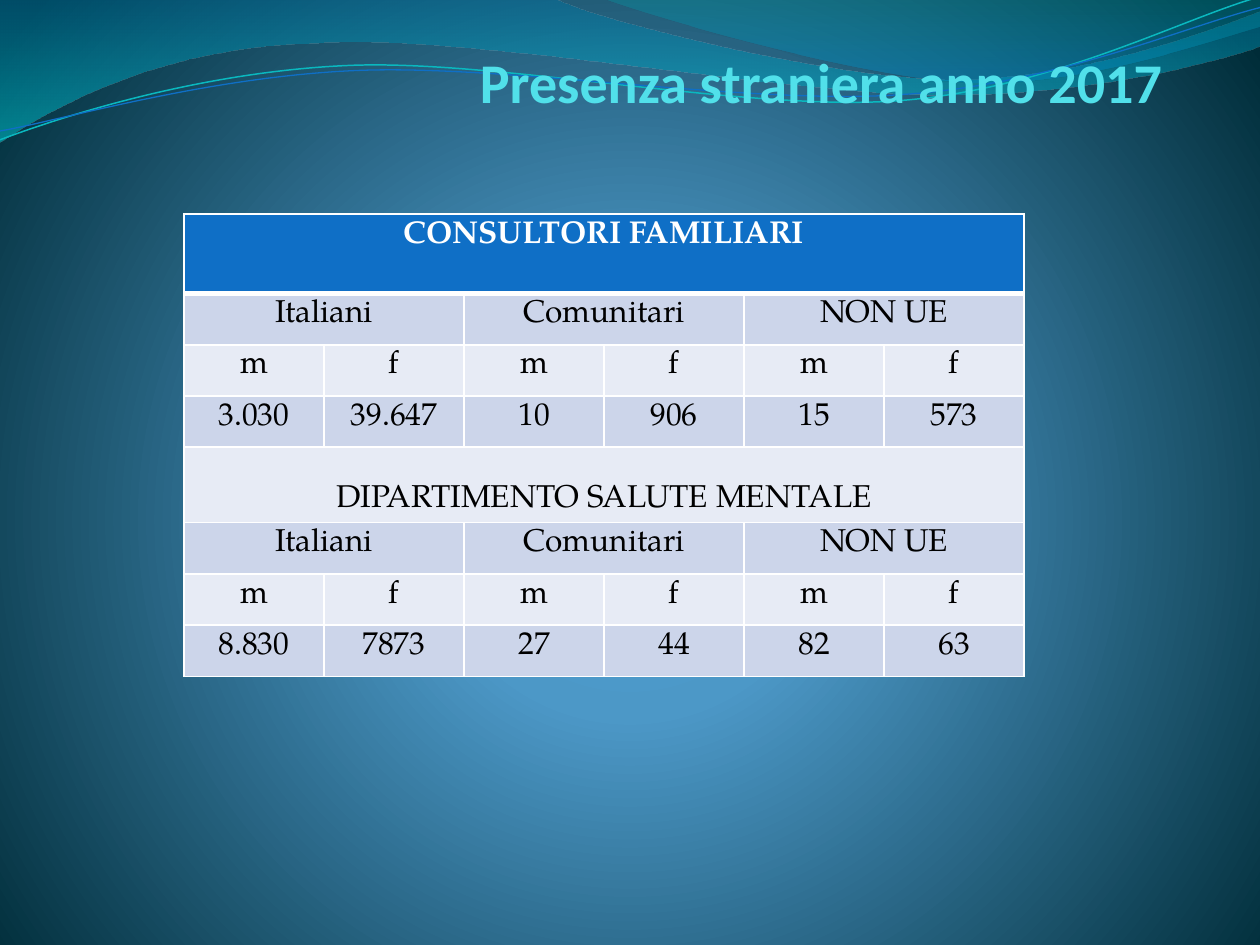
from lxml import etree
from pptx import Presentation
from pptx.dml.color import RGBColor
from pptx.enum.text import MSO_ANCHOR, MSO_AUTO_SIZE, PP_ALIGN
from pptx.oxml import parse_xml
from pptx.oxml.ns import nsdecls, qn
from pptx.util import Inches, Pt

BOTTOM, TOP = MSO_ANCHOR.BOTTOM, MSO_ANCHOR.TOP
CENTER, RIGHT = PP_ALIGN.CENTER, PP_ALIGN.RIGHT
color = RGBColor.from_string


def set_gradient(fill, parent, stops, direction):
    """Put a gradient of (position, colour, opacity) stops in place of the fill."""
    fill.solid()
    gradient = parse_xml(f'<a:gradFill {nsdecls("a")} rotWithShape="1"><a:gsLst/>{direction}</a:gradFill>')
    for position, value, opacity in stops:
        stop = etree.SubElement(gradient[0], qn("a:gs"), pos=str(position * 1000))
        tint = etree.SubElement(stop, qn("a:srgbClr"), val=value)
        if opacity < 100:
            etree.SubElement(tint, qn("a:alpha"), val=str(opacity * 1000))
    parent.replace(parent.find(qn("a:solidFill")), gradient)


def add_wave(page, start, segments, closed):
    """Draw an outline of straight (one point) and cubic (three points) segments."""
    builder = page.shapes.build_freeform(start[0] * 100, start[1] * 100, scale=Inches(0.01))
    points = [(x * 100, y * 100) for segment in segments for x, y in segment]
    builder.add_line_segments(points, close=closed)
    wave = builder.convert_to_shape()
    lines = iter(wave._element.findall(".//" + qn("a:lnTo")))
    for segment in segments:
        line = next(lines)
        if len(segment) == 3:
            line.tag = qn("a:cubicBezTo")
            for extra in (next(lines), next(lines)):
                line.append(extra[0])
                extra.getparent().remove(extra)
    wave.shadow.inherit = False
    return wave


deck = Presentation()
deck.slide_width, deck.slide_height = Inches(10), Inches(7.5)
page = deck.slides.add_slide(deck.slide_layouts[0])
title, subtitle = page.placeholders
subtitle._element.getparent().remove(subtitle._element)

# Background
background = page.background.fill
background.solid()
set_gradient(
    background, page._element.find(".//" + qn("p:bgPr")),
    [(0, "4AA0D6", 100), (25, "4C98C7", 100), (100, "002C38", 100)],
    '<a:path path="circle"><a:fillToRect l="10000" t="110000" r="10000" b="100000"/></a:path>')

# Waves: start, segments, gradient stops or line colour and width
waves = [
    ((0, 0), [
        [(4.4, -0.01)],
        [(4.76, 0.17), (6.64, 0.63), (7.58, 0.63)],
        [(8.53, 0.63), (9.58, 0.26), (10, 0.09)],
        [(10.01, 0.36)],
        [(9.83, 0.44), (8.7, 0.76), (7.46, 0.75)],
        [(6.22, 0.75), (3.82, 0.28), (2.57, 0.34)],
        [(1.29, 0.36), (0.46, 0.83), (-0.01, 1.13)],
    ], [(0, "0074A1", 45), (100, "00C6CF", 55)], None),
    ((4.79, -0.01), [
        [(5.09, 0.11), (6.82, 0.62), (7.69, 0.65)],
        [(8.56, 0.69), (9.61, 0.32), (10, 0.21)],
        [(10, 0)],
    ], [(0, "00A1A9", 30), (80, "008BBF", 45)], None),
    ((0, 1.11), [
        [(0.48, 0.93), (1.58, 0.57), (2.77, 0.52)],
        [(3.95, 0.47), (5.93, 0.89), (7.13, 0.8)],
        [(8.33, 0.71), (9.38, 0.15), (9.98, -0.02)],
    ], None, ("0AB8BF", 0.85)),
    ((0, 1.04), [
        [(0.47, 0.96), (1.64, 0.61), (2.83, 0.56)],
        [(4.03, 0.51), (5.97, 0.84), (7.17, 0.75)],
        [(8.36, 0.67), (9.41, 0.21), (10, 0.06)],
    ], None, ("0F6FC6", 0.75)),
]
for start, segments, stops, stroke in waves:
    wave = add_wave(page, start, segments, closed=stroke is None)
    if stroke:
        wave.fill.background()
        wave.line.color.rgb = color(stroke[0])
        wave.line.width = Pt(stroke[1])
    else:
        set_gradient(wave.fill, wave._element.spPr, stops, '<a:lin ang="5400000" scaled="1"/>')
        wave.line.fill.background()

# Title, in front of the waves
page.shapes._spTree.append(title._element)
title.left, title.top, title.width, title.height = map(Inches, (0.75, 0.52, 8.5, 0.39))
frame = title.text_frame
frame.auto_size = MSO_AUTO_SIZE.NONE
frame.vertical_anchor = BOTTOM
frame.margin_left = frame.margin_top = frame.margin_bottom = 0
frame.margin_right = Inches(0.02)
para = frame.paragraphs[0]
para.alignment = RIGHT
span = para.add_run()
span.text = "Presenza straniera anno 2017"
span.font.name, span.font.size, span.font.bold = "Calibri", Pt(32), True
span.font.color.rgb = color("51E0EA")

# Table: each row is split evenly over the six columns
groups = ["Italiani", "Comunitari", "NON UE"]
sexes = ["m", "f"] * 3
rows = [
    ["CONSULTORI FAMILIARI"], groups, sexes,
    ["3.030", "39.647", "10", "906", "15", "573"],
    ["DIPARTIMENTO SALUTE MENTALE"], groups, sexes,
    ["8.830", "7873", "27", "44", "82", "63"],
]
columns = 6
height, header_height, section_height = Inches(3.67), Inches(0.63), Inches(0.6)
plain_height = (height - header_height - section_height) // (len(rows) - 2)
table = page.shapes.add_table(
    len(rows), columns, Inches(1.46), Inches(1.7), Inches(6.67), height).table
table.horz_banding = False
for r, texts in enumerate(rows):
    header = r == 0
    section = len(texts) == 1 and not header
    table.rows[r].height = header_height if header else section_height if section else plain_height
    width = columns // len(texts)
    for i, text in enumerate(texts):
        cell = table.cell(r, i * width)
        if width > 1:
            cell.merge(table.cell(r, (i + 1) * width - 1))
        cell.vertical_anchor = BOTTOM if section else TOP
        cell.fill.solid()
        cell.fill.fore_color.rgb = color("0F6FC6" if header else "CCD5EA" if r % 2 else "E7EBF5")
        para = cell.text_frame.paragraphs[0]
        para.alignment = CENTER
        span = para.add_run()
        span.text = text
        span.font.name, span.font.size, span.font.bold = "TeX Gyre Pagella", Pt(18), header
        span.font.color.rgb = color("FFFFFF" if header else "000000")

    # White borders, heavier under the header
    for c in range(columns):
        properties = table.cell(r, c)._tc.get_or_add_tcPr()
        for position, side in enumerate("LRTB"):
            heavy = (r, side) in ((0, "B"), (1, "T"))
            properties.insert(position, parse_xml(
                f'<a:ln{side} {nsdecls("a")} w="{Pt(3 if heavy else 1)}">'
                f'<a:solidFill><a:srgbClr val="FFFFFF"/></a:solidFill></a:ln{side}>'))

deck.save("out.pptx")
